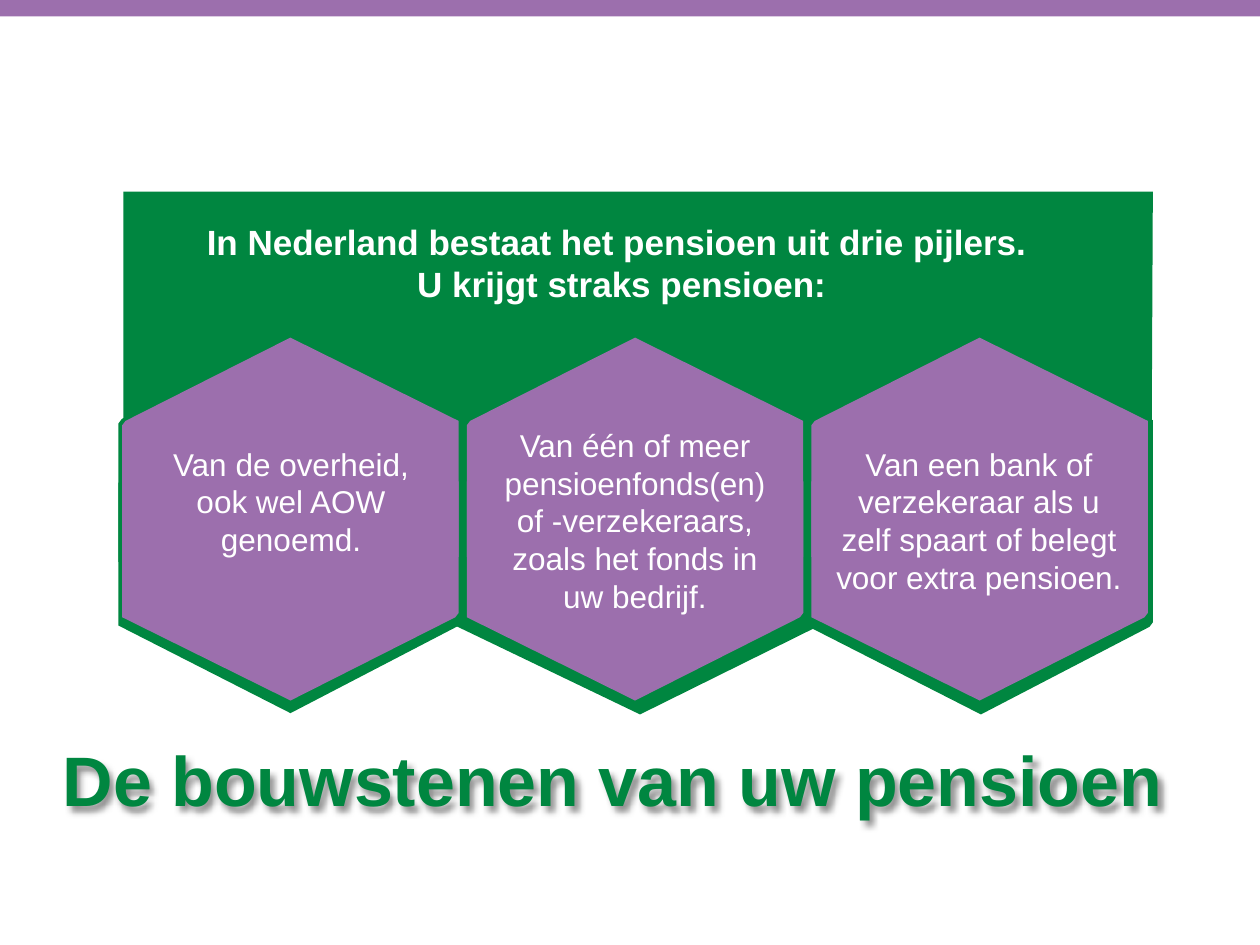
from lxml import etree
from pptx import Presentation
from pptx.dml.color import RGBColor as Rgb
from pptx.enum.shapes import MSO_SHAPE as Kind
from pptx.enum.text import MSO_ANCHOR as Anchor, PP_ALIGN as Align
from pptx.oxml.ns import qn
from pptx.util import Inches, Pt

HUES = {"green": "008640", "purple": "9C6FAD", "white": "FFFFFF", "black": "000000"}
FONT = "Arial"

# Upper half of a hexagon, as parts of its width and height
HALF = [(0.01, 0.38), (0.5, 0), (1, 0.38), (1, 1), (0, 1), (0, 0.4)]


class Board:
    """Holds the style and the current slide."""

    def __init__(self, deck):
        self.slide = deck.slides.add_slide(deck.slide_layouts[6])
        self.shapes = self.slide.shapes

    def paint(self, shape, hue):
        shape.shadow.inherit = False
        shape.fill.solid()
        shape.fill.fore_color.rgb = Rgb.from_string(HUES[hue])
        shape.line.fill.background()

    def rect(self, x, y, w, h, hue):
        box = self.shapes.add_shape(
            Kind.RECTANGLE, Inches(x), Inches(y), Inches(w), Inches(h))
        self.paint(box, hue)
        return box

    def outline(self, dots, hue, home=None):
        dots = [(Inches(x), Inches(y)) for x, y in dots]
        pen = (home or self.shapes).build_freeform(*dots[0])
        pen.add_line_segments(dots[1:])
        shape = pen.convert_to_shape()
        self.paint(shape, hue)
        return shape

    def hexagon(self, x, y, w, h, drop, hue):
        """Two overlapping halves; the lower one is turned and set drop lower."""
        home = self.shapes.add_group_shape().shapes
        for top, turn in ((y, 0), (y + drop, 180)):
            dots = [(x + w * a, top + h * b) for a, b in HALF]
            self.outline(dots, hue, home).rotation = turn

    def text(self, x, y, w, h, lines, size, hue="white", bold=False,
             align=Align.CENTER, inset=None, box=None):
        box = box or self.shapes.add_textbox(
            Inches(x), Inches(y), Inches(w), Inches(h))
        frame = box.text_frame
        frame.word_wrap = True
        frame.vertical_anchor = Anchor.TOP
        if inset is not None:
            frame.margin_left = frame.margin_right = Inches(inset)
            frame.margin_top = frame.margin_bottom = Inches(inset)
        para = frame.paragraphs[0]
        para.alignment = align
        for i, line in enumerate(lines):
            if i:
                para.add_line_break()
            run = para.add_run()
            run.text = line
            font = run.font
            font.name, font.size, font.bold = FONT, Pt(size), bold
            font.color.rgb = Rgb.from_string(HUES[hue])
        return box

    def shade(self, box):
        """Give the text of an unfilled box a soft shadow."""
        box.fill.background()
        props = box.element.spPr
        fx = etree.SubElement(props, qn("a:effectLst"))
        cast = etree.SubElement(
            fx, qn("a:outerShdw"), blurRad=str(Pt(3)), dist=str(Pt(3)),
            dir="2700000", algn="tl", rotWithShape="0")
        tint = etree.SubElement(cast, qn("a:srgbClr"), val=HUES["black"])
        etree.SubElement(tint, qn("a:alpha"), val="43000")


def main():
    deck = Presentation()
    deck.slide_width, deck.slide_height = Inches(10), Inches(7.5)
    board = Board(deck)

    board.rect(0, 0, 10, 0.13, "purple")
    for x, y in ((0.94, 2.63), (6.42, 2.64)):
        board.hexagon(x, y, 2.73, 1.83, 1.2, "green")
    board.outline([(0.98, 3.7), (5.08, 5.67), (9.14, 3.66),
                   (9.15, 1.52), (0.98, 1.52)], "green")
    board.text(1.09, 1.55, 7.69, 3.46,
               ["In Nederland bestaat het pensioen uit drie pijlers. ",
                "U krijgt straks pensioen:"], 20, bold=True, inset=0.2)
    for i in range(3):
        board.hexagon(0.97 + 2.735 * i, 2.68, 2.67, 1.74, 1.14, "purple")

    title = board.text(0.4, 5.8, 9.29, 1.25, ["De bouwstenen van uw pensioen"],
                       40, "green", True, Align.LEFT)
    board.shade(title)

    board.text(6.52, 3.48, 2.5, 1.31,
               ["Van een bank of verzekeraar als u zelf spaart of belegt "
                "voor extra pensioen."], 18)
    state = board.rect(1.06, 3.48, 2.5, 1.31, "purple")
    board.text(1.06, 3.48, 2.5, 1.31,
               ["Van de overheid, ook wel AOW genoemd."], 18, box=state)
    board.text(3.79, 3.33, 2.5, 1.62,
               ["Van één of meer pensioenfonds(en) of -verzekeraars, "
                "zoals het fonds in uw bedrijf."], 18)

    deck.save("out.pptx")


if __name__ == "__main__":
    main()
